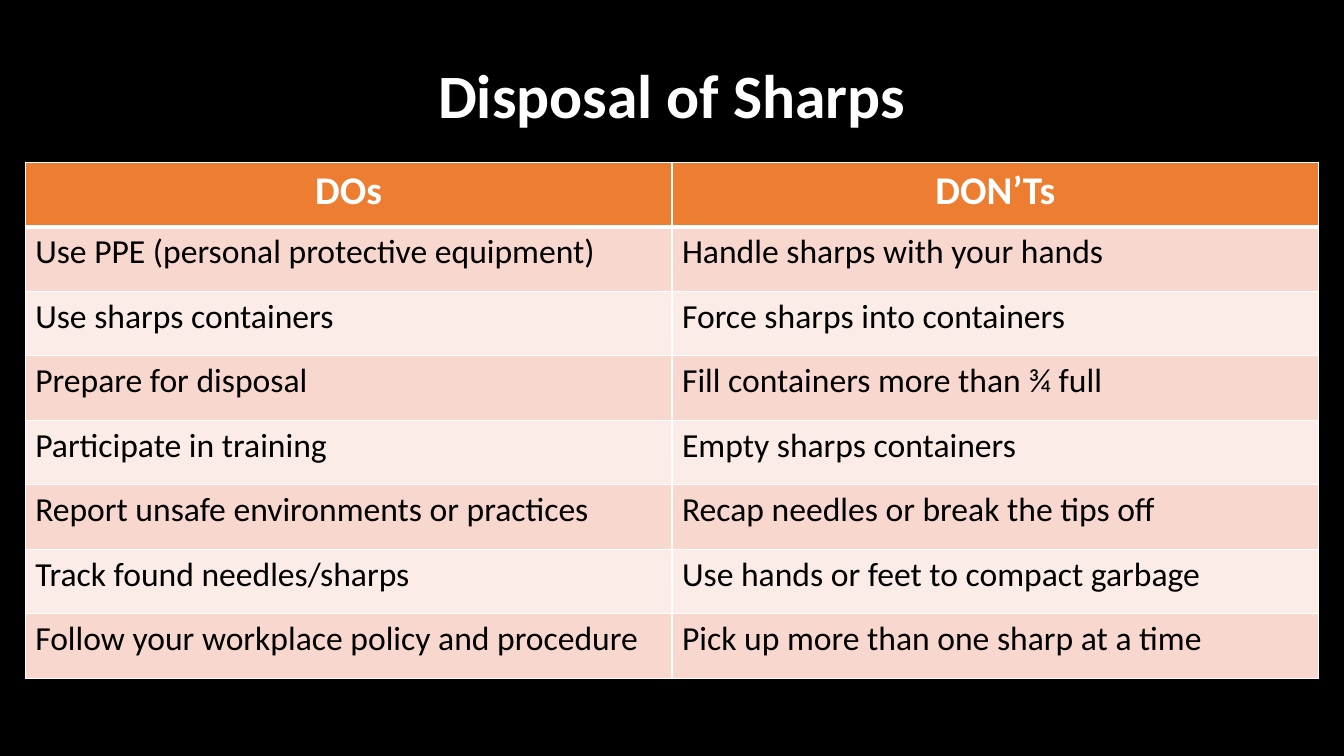
"""Build the slide on the dos and don'ts of sharps disposal."""
from dataclasses import dataclass

from lxml.etree import SubElement
from pptx import Presentation
from pptx.dml.color import RGBColor
from pptx.enum.text import MSO_ANCHOR, PP_ALIGN
from pptx.oxml.ns import qn
from pptx.slide import Slide
from pptx.table import _Cell
from pptx.text.text import TextFrame
from pptx.util import Inches, Pt

COLORS = {
    "black": "000000",
    "white": "FFFFFF",
    "header": "ED7D31",
    "odd_row": "F8D7CE",
    "even_row": "FCECE8",
}
FONT = "Calibri"
LEFT, WIDTH = 0.25, 12.83
TABLE_TOP, ROW_HEIGHT = 1.61, 0.64


@dataclass(frozen=True)
class TextStyle:
    size: int
    color: str
    bold: bool
    align: PP_ALIGN


@dataclass(frozen=True)
class Advice:
    do: str
    dont: str


TITLE_STYLE = TextStyle(44, "white", True, PP_ALIGN.CENTER)
HEADER_STYLE = TextStyle(28, "white", True, PP_ALIGN.CENTER)
BODY_STYLE = TextStyle(24, "black", False, PP_ALIGN.LEFT)

ADVICE = [
    Advice("DOs", "DON’Ts"),
    Advice("Use PPE (personal protective equipment)", "Handle sharps with your hands"),
    Advice("Use sharps containers", "Force sharps into containers"),
    Advice("Prepare for disposal", "Fill containers more than ¾ full"),
    Advice("Participate in training", "Empty sharps containers"),
    Advice("Report unsafe environments or practices", "Recap needles or break the tips off"),
    Advice("Track found needles/sharps", "Use hands or feet to compact garbage"),
    Advice("Follow your workplace policy and procedure", "Pick up more than one sharp at a time"),
]


def rgb(name: str) -> RGBColor:
    return RGBColor.from_string(COLORS[name])


def write(frame: TextFrame, text: str, style: TextStyle) -> None:
    para = frame.paragraphs[0]
    para.alignment = style.align
    span = para.add_run()
    span.text = text
    span.font.name = FONT
    span.font.size = Pt(style.size)
    span.font.bold = style.bold
    span.font.color.rgb = rgb(style.color)


def add_borders(cell: _Cell, top: int, bottom: int) -> None:
    properties = cell._tc.get_or_add_tcPr()
    for side, points in {"L": 1, "R": 1, "T": top, "B": bottom}.items():
        line = SubElement(properties, qn(f"a:ln{side}"), w=str(Pt(points)))
        fill = SubElement(line, qn("a:solidFill"))
        SubElement(fill, qn("a:srgbClr"), val=COLORS["white"])


def add_title(page: Slide, text: str) -> None:
    box = page.shapes.add_textbox(Inches(LEFT), Inches(0.25), Inches(WIDTH), Inches(1.45))
    frame = box.text_frame
    frame.word_wrap = True
    frame.vertical_anchor = MSO_ANCHOR.MIDDLE
    write(frame, text, TITLE_STYLE)
    frame.paragraphs[0].line_spacing = 0.9


def add_advice_table(page: Slide, advice: list[Advice]) -> None:
    table = page.shapes.add_table(
        len(advice), 2, Inches(LEFT), Inches(TABLE_TOP),
        Inches(WIDTH), Inches(ROW_HEIGHT * len(advice)),
    ).table
    for index, entry in enumerate(advice):
        is_header = index == 0
        fill = "header" if is_header else "odd_row" if index % 2 else "even_row"
        style = HEADER_STYLE if is_header else BODY_STYLE
        for column, text in enumerate((entry.do, entry.dont)):
            cell = table.cell(index, column)
            add_borders(cell, top=3 if index == 1 else 1, bottom=3 if is_header else 1)
            cell.fill.solid()
            cell.fill.fore_color.rgb = rgb(fill)
            write(cell.text_frame, text, style)


def main() -> None:
    deck = Presentation()
    deck.slide_width, deck.slide_height = Inches(13.33), Inches(7.5)
    page = deck.slides.add_slide(deck.slide_layouts[6])
    page.background.fill.solid()
    page.background.fill.fore_color.rgb = rgb("black")
    add_title(page, "Disposal of Sharps")
    add_advice_table(page, ADVICE)
    deck.save("out.pptx")


if __name__ == "__main__":
    main()
